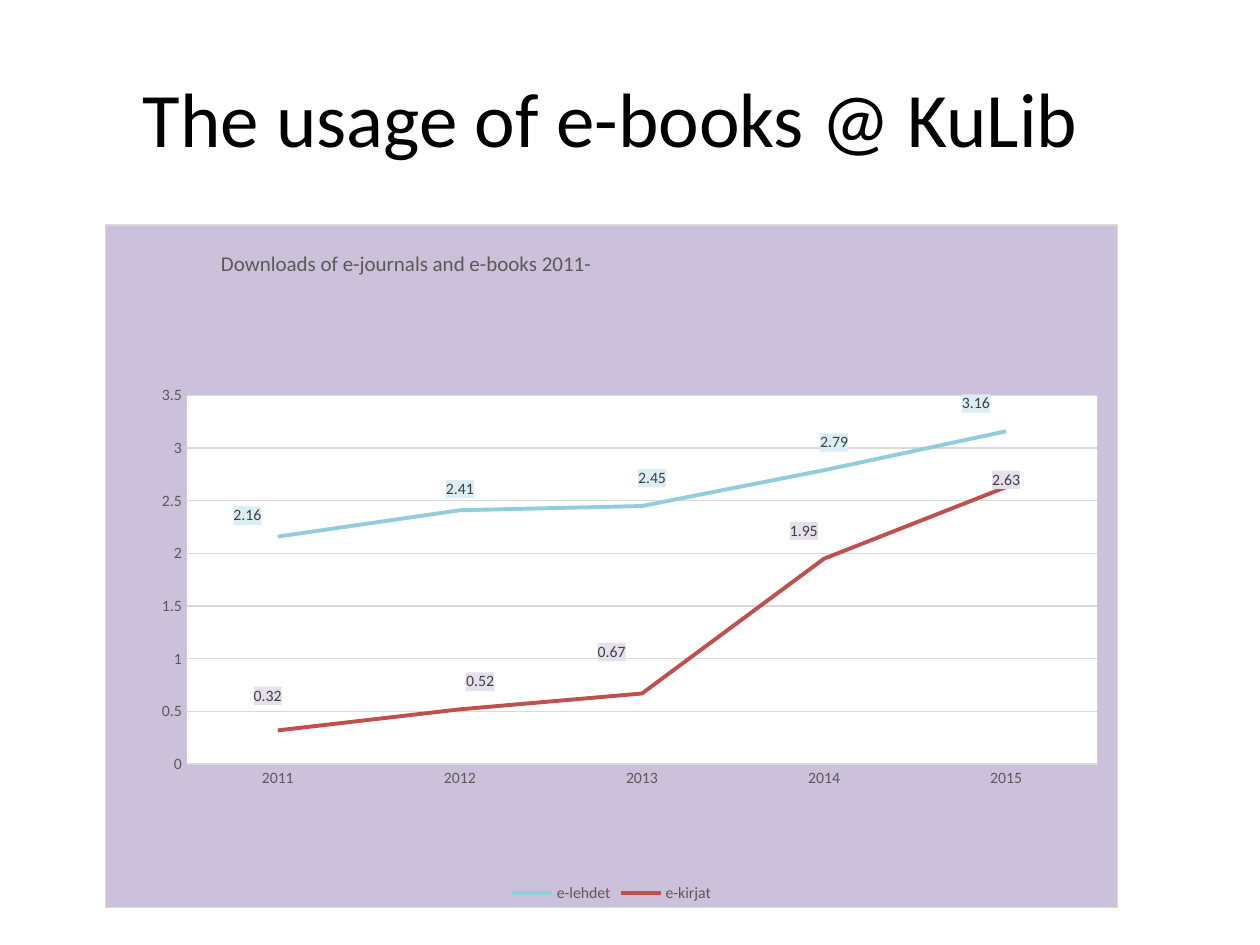
from pptx import Presentation
from pptx.chart.data import CategoryChartData
from pptx.dml.color import RGBColor
from pptx.enum.chart import XL_CHART_TYPE, XL_LABEL_POSITION, XL_LEGEND_POSITION, XL_TICK_MARK
from pptx.enum.text import MSO_ANCHOR, PP_ALIGN
from pptx.oxml import parse_xml
from pptx.oxml.ns import nsdecls, qn
from pptx.util import Cm, Pt

HUES = {
    "ink": "000000", "text": "595959", "label": "404040", "grid": "D9D9D9",
    "panel": "CCC1DA", "plot": "FFFFFF",
}
YEARS = ["2011", "2012", "2013", "2014", "2015"]
SERIES = [
    {"name": "e-lehdet", "line": "93CDDD", "tag": "DBEEF4",
     "vals": [2.16, 2.41, 2.45, 2.79, 3.16],
     "shift": [(-0.03, -0.01), (0, -0.01), (0.01, -0.02), (0.01, -0.02), (-0.03, -0.02)]},
    {"name": "e-kirjat", "line": "C0504D", "tag": "E6E0EC",
     "vals": [0.32, 0.52, 0.67, 1.95, 2.63],
     "shift": [(-0.01, -0.03), (0.02, -0.02), (-0.03, -0.04), (-0.02, -0.02), (0, 0.01)]},
]


def apply(item, **vals):
    """Set each named attribute on an item."""
    for key, val in vals.items():
        setattr(item, key, val)


def style(font, size, hue):
    """Give a font its face, size and colour."""
    apply(font, name="Calibri", size=Pt(size), bold=False)
    font.color.rgb = RGBColor.from_string(HUES[hue])


def stroke(line, hue, width):
    """Give a line its colour and width."""
    line.color.rgb = RGBColor.from_string(hue)
    line.width = Pt(width)


def fill(hue, edge=None):
    """Return shape properties with a solid fill and an optional edge."""
    solid = '<a:solidFill><a:srgbClr val="{}"/></a:solidFill>'
    rim = f'<a:ln w="{Pt(0.75)}">{solid.format(edge)}</a:ln>' if edge else "<a:ln><a:noFill/></a:ln>"
    return parse_xml(f'<c:spPr {nsdecls("c", "a")}>{solid.format(hue)}{rim}</c:spPr>')


def place(node, index, **tags):
    """Set a manual layout on a chart part."""
    old = node.find(qn("c:layout"))
    if old is not None:
        node.remove(old)
    body = "".join(f'<c:{key} val="{val}"/>' for key, val in tags.items())
    node.insert(index, parse_xml(
        f'<c:layout {nsdecls("c")}><c:manualLayout>{body}</c:manualLayout></c:layout>'))


def add_title(slide, left, top, width, height):
    """Fill the title placeholder in its box."""
    title = slide.shapes.title
    apply(title, left=left, top=top, width=width, height=height)
    frame = title.text_frame
    apply(frame, text="The usage of e-books @ KuLib", vertical_anchor=MSO_ANCHOR.MIDDLE)
    para = frame.paragraphs[0]
    para.alignment = PP_ALIGN.CENTER
    style(para.runs[0].font, 44, "ink")


def add_tags(series, spec):
    """Label each point with its value on a tinted tag, without leader lines."""
    for num, (x, y) in enumerate(spec["shift"]):
        label = series.points[num].data_label
        style(label.font, 9, "label")
        label.position = XL_LABEL_POSITION.ABOVE
        node = series._element.xpath(f"c:dLbls/c:dLbl[c:idx/@val='{num}']")[0]
        place(node, 1, x=x, y=y)
        node.find(qn("c:txPr")).addprevious(fill(spec["tag"]))
    for lead in series._element.xpath("c:dLbls/c:showLeaderLines"):
        lead.set("val", "0")


def style_axes(chart):
    """Format both axes and the grid."""
    for axis in (chart.category_axis, chart.value_axis):
        apply(axis, major_tick_mark=XL_TICK_MARK.NONE, minor_tick_mark=XL_TICK_MARK.NONE)
        style(axis.tick_labels.font, 9, "text")
    stroke(chart.category_axis.format.line, HUES["grid"], 0.75)
    scale = chart.value_axis
    apply(scale, minimum_scale=0, maximum_scale=3.5, major_unit=0.5, has_major_gridlines=True)
    scale.format.line.fill.background()
    stroke(scale.major_gridlines.format.line, HUES["grid"], 0.75)


def add_graph(slide, left, top, width, height):
    """Draw the download chart in its box."""
    data = CategoryChartData()
    data.categories = YEARS
    for spec in SERIES:
        data.add_series(spec["name"], spec["vals"])
    chart = slide.shapes.add_chart(XL_CHART_TYPE.LINE, left, top, width, height, data).chart
    style(chart.font, 10, "ink")
    apply(chart, has_title=True, has_legend=True)
    frame = chart.chart_title.text_frame
    frame.text = "Downloads of e-journals and e-books 2011-"
    style(frame.paragraphs[0].runs[0].font, 12, "text")
    apply(chart.legend, position=XL_LEGEND_POSITION.BOTTOM, include_in_layout=False)
    style(chart.legend.font, 9, "text")
    style_axes(chart)
    chart.plots[0].vary_by_categories = False
    for series, spec in zip(chart.plots[0].series, SERIES):
        series.smooth = False
        stroke(series.format.line, spec["line"], 2.25)
        add_tags(series, spec)
    root = chart._chartSpace
    root.find(qn("c:txPr")).addprevious(fill(HUES["panel"], HUES["grid"]))
    area = root.xpath("c:chart/c:plotArea")[0]
    area.append(fill(HUES["plot"]))
    edge = {"xMode": "edge", "yMode": "edge"}
    place(area, 0, layoutTarget="inner", **edge, x=0.08, y=0.25, w=0.9, h=0.54)
    place(root.xpath("c:chart/c:title")[0], 1, **edge, x=0.11, y=0.03)


def main():
    """Build and save the slide."""
    deck = Presentation()
    apply(deck, slide_width=Cm(25.4), slide_height=Cm(19.05))
    slide = deck.slides.add_slide(deck.slide_layouts[5])
    add_title(slide, Cm(0.5), Cm(0.76), Cm(23.62), Cm(3.18))
    add_graph(slide, Cm(2.12), Cm(4.52), Cm(20.42), Cm(13.79))
    deck.save("out.pptx")


if __name__ == "__main__":
    main()
